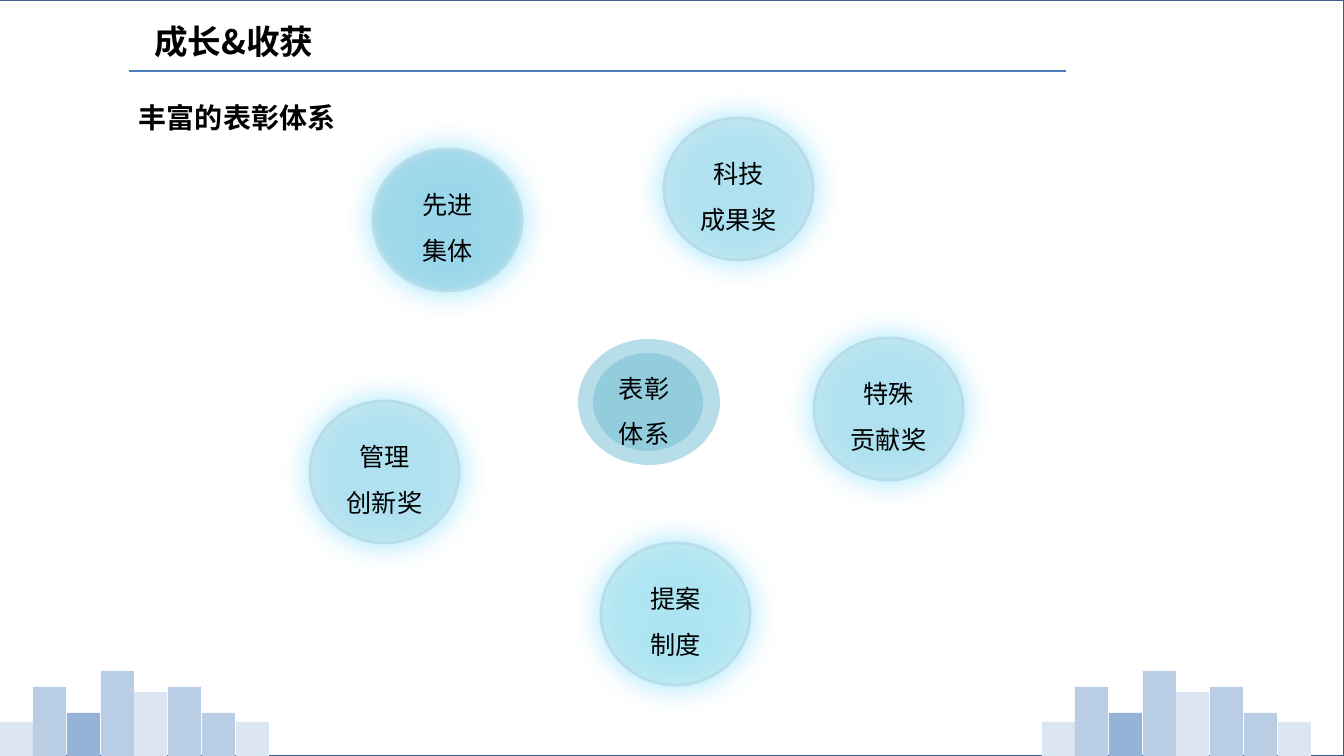
from dataclasses import dataclass

from lxml.etree import SubElement
from pptx import Presentation
from pptx.dml.color import RGBColor
from pptx.enum.shapes import MSO_CONNECTOR, MSO_SHAPE
from pptx.enum.text import MSO_ANCHOR, MSO_AUTO_SIZE, PP_ALIGN
from pptx.oxml.ns import qn
from pptx.util import Emu, Pt


@dataclass(frozen=True)
class Theme:
    font: str = "Noto Sans CJK SC"
    title_size: int = 24
    heading_size: int = 20
    label_size: int = 18
    text: str = "000000"
    white: str = "FFFFFF"
    frame: str = "3A5F8C"
    rule: str = "4B7EBC"
    glow: str = "53D2FF"
    teal: str = "93CDDD"
    pale_teal: str = "B7DEE8"
    aqua: str = "B4E4EA"
    bar_light: str = "DCE6F2"
    bar_middle: str = "B9CDE5"
    bar_dark: str = "95B3D7"


class SlideBuilder:
    """Draws styled elements on one slide, measured in px."""

    EMU_PER_PX = 914400 / 100.8

    def __init__(self, presentation, theme):
        self.theme = theme
        presentation.slide_width = self.px(1344)
        presentation.slide_height = self.px(756)
        self.slide = presentation.slides.add_slide(presentation.slide_layouts[5])

    def px(self, length):
        return Emu(round(length * self.EMU_PER_PX))

    def box(self, *lengths):
        return [self.px(length) for length in lengths]

    def shape(self, kind, bounds, fill, line=None, opacity=100, parent=None):
        shapes = (parent or self.slide).shapes
        shape = shapes.add_shape(kind, *self.box(*bounds))
        shape.shadow.inherit = False
        shape.fill.solid()
        shape.fill.fore_color.rgb = RGBColor.from_string(fill)
        if opacity < 100:
            color = shape._element.spPr.find(qn("a:solidFill"))[0]
            SubElement(color, qn("a:alpha"), val=str(opacity * 1000))
        if line:
            shape.line.color.rgb = RGBColor.from_string(line)
            shape.line.width = Pt(2)
        else:
            shape.line.fill.background()
        return shape

    def rule(self, left, right, top):
        ends = self.box(left, top, right, top)
        connector = self.slide.shapes.add_connector(MSO_CONNECTOR.STRAIGHT, *ends)
        connector.line.color.rgb = RGBColor.from_string(self.theme.rule)
        connector.line.width = Pt(2)
        SubElement(connector._element.spPr, qn("a:effectLst"))

    def fill_text(self, shape, lines, size, bold=False, align=PP_ALIGN.LEFT, spacing=1.0):
        frame = shape.text_frame
        frame.vertical_anchor = MSO_ANCHOR.MIDDLE
        frame.word_wrap = True
        for index, line in enumerate(lines):
            paragraph = frame.add_paragraph() if index else frame.paragraphs[0]
            paragraph.alignment = align
            paragraph.line_spacing = spacing
            run = paragraph.add_run()
            run.text = line
            run.font.name = self.theme.font
            run.font.size = Pt(size)
            run.font.bold = bold
            run.font.color.rgb = RGBColor.from_string(self.theme.text)
            latin = run._r.rPr.find(qn("a:latin"))
            east_asian = SubElement(run._r.rPr, qn("a:ea"), typeface=self.theme.font)
            latin.addnext(east_asian)

    def title(self, bounds, text):
        title = self.slide.shapes.title
        title.left, title.top, title.width, title.height = self.box(*bounds)
        self.fill_text(title, [text], self.theme.title_size, bold=True)
        title.text_frame.auto_size = MSO_AUTO_SIZE.SHAPE_TO_FIT_TEXT
        title._element.getparent().append(title._element)

    def text(self, bounds, lines, size, bold=False, spacing=1.0, parent=None):
        shapes = (parent or self.slide).shapes
        text_box = shapes.add_textbox(*self.box(*bounds))
        self.fill_text(text_box, lines, size, bold, spacing=spacing)
        text_box.text_frame.auto_size = MSO_AUTO_SIZE.SHAPE_TO_FIT_TEXT

    def award(self, left, top, fill, lines):
        bounds = (left, top, 149, 142)
        circle = self.shape(MSO_SHAPE.OVAL, bounds, fill, self.theme.pale_teal, 60)
        effects = circle._element.spPr.find(qn("a:effectLst"))
        shadow = SubElement(effects, qn("a:outerShdw"), blurRad=str(int(Pt(20))),
                            dist="0", dir="0", algn="ctr", rotWithShape="0")
        color = SubElement(shadow, qn("a:srgbClr"), val=self.theme.glow)
        SubElement(color, qn("a:alpha"), val="80000")
        circle.text_frame.margin_left = circle.text_frame.margin_right = 0
        self.fill_text(circle, lines, self.theme.label_size,
                       align=PP_ALIGN.CENTER, spacing=1.5)

    def hub(self, lines):
        group = self.slide.shapes.add_group_shape()
        self.shape(MSO_SHAPE.OVAL, (578, 339, 142, 126), self.theme.pale_teal,
                   parent=group)
        self.shape(MSO_SHAPE.OVAL, (593, 353, 110, 98), self.theme.teal, parent=group)
        self.text((609, 355, 111, 97), lines, self.theme.label_size,
                  spacing=1.5, parent=group)

    def skyline(self, left):
        light, middle = self.theme.bar_light, self.theme.bar_middle
        bars = [(34, light), (69, middle), (43, self.theme.bar_dark), (85, middle),
                (64, light), (69, middle), (43, middle), (34, light)]
        group = self.slide.shapes.add_group_shape()
        for index, (height, fill) in enumerate(bars):
            bounds = (left + index * 236 // 7, 756 - height, 33, height)
            self.shape(MSO_SHAPE.RECTANGLE, bounds, fill, parent=group)


def main():
    presentation = Presentation()
    theme = Theme()
    builder = SlideBuilder(presentation, theme)
    builder.shape(MSO_SHAPE.RECTANGLE, (-2, 0, 1346, 756), theme.white, theme.frame, 70)
    builder.rule(129, 1066, 71)
    awards = [
        (373, 149, theme.teal, ["先进", "集体"]),
        (664, 118, theme.pale_teal, ["科技", "成果奖"]),
        (814, 338, theme.pale_teal, ["特殊", "贡献奖"]),
        (310, 401, theme.pale_teal, ["管理", "创新奖"]),
        (601, 543, theme.aqua, ["提案", "制度"]),
    ]
    for award in awards:
        builder.award(*award)
    builder.title((144, 16, 244, 50), "成长&收获")
    builder.hub(["表彰", "体系"])
    builder.text((129, 95, 283, 44), ["丰富的表彰体系"], theme.heading_size, bold=True)
    for left in (0, 1042):
        builder.skyline(left)
    presentation.save("out.pptx")


if __name__ == "__main__":
    main()
